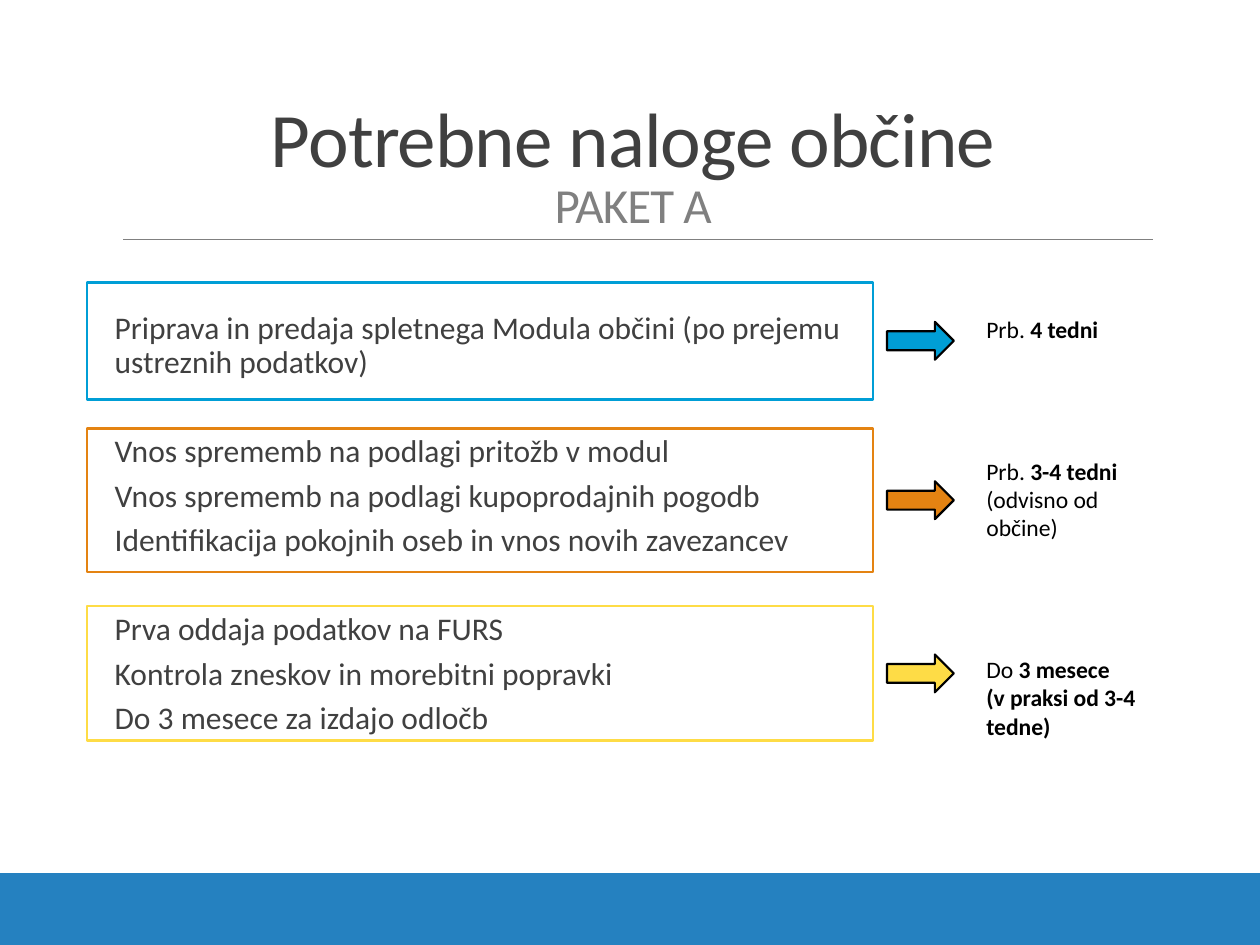
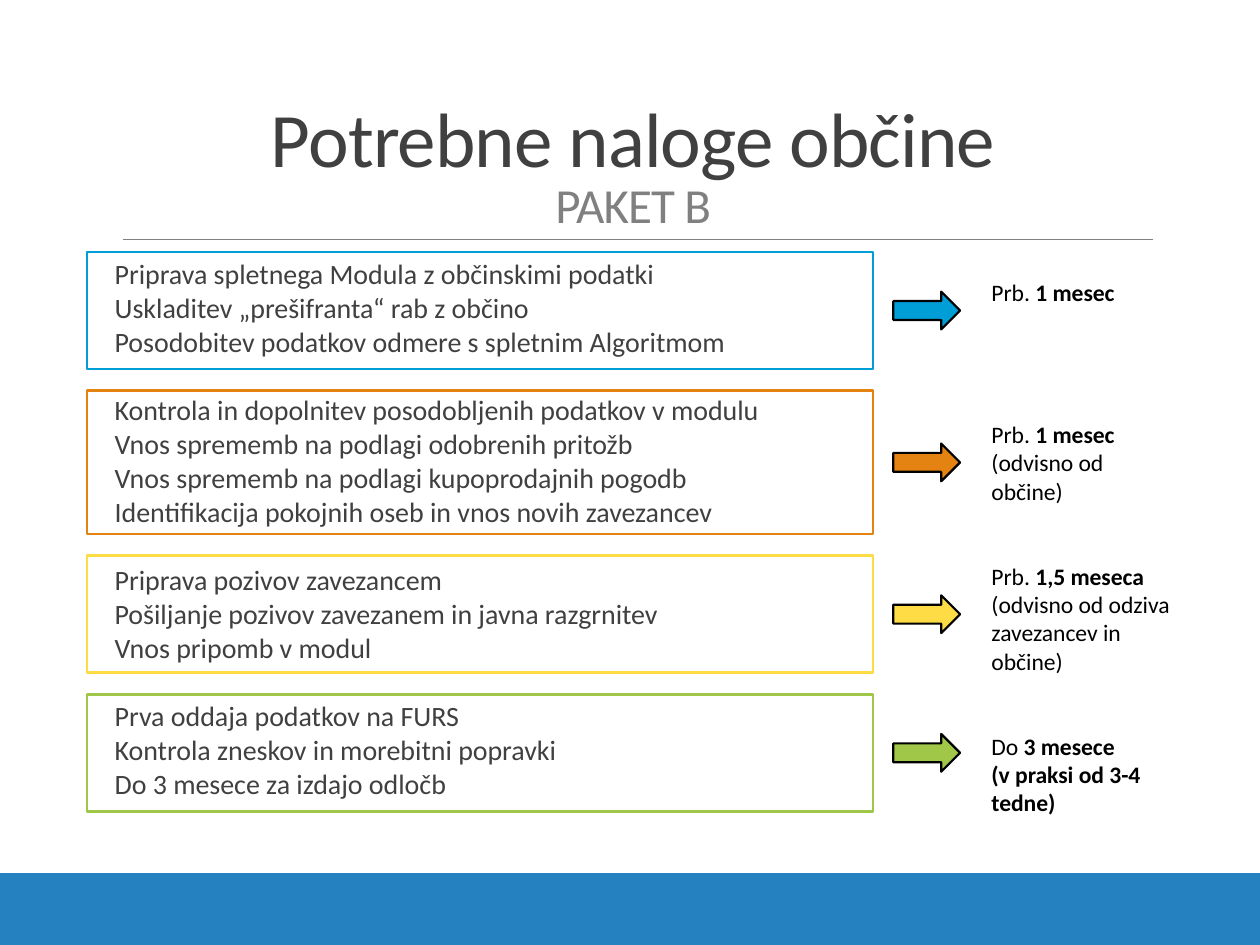
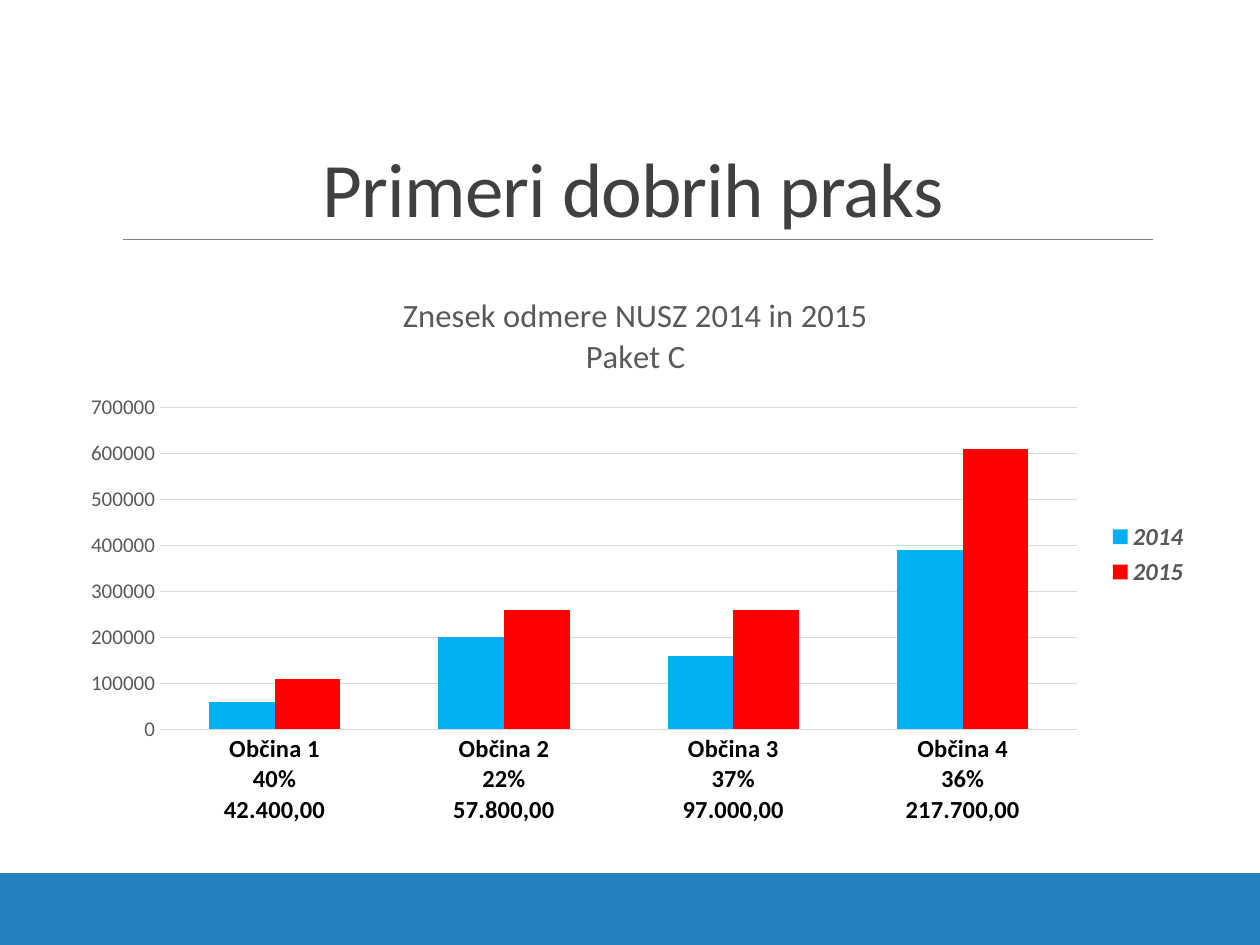
"""Build three slides on municipal tasks and good practice."""
from lxml import etree
from pptx import Presentation
from pptx.chart.data import CategoryChartData
from pptx.dml.color import RGBColor
from pptx.enum import chart as charts, shapes, text
from pptx.oxml import ns
from pptx.util import Inches, Pt

FONT = "Calibri"
BAND = RGBColor(0x25, 0x81, 0xC0)
BLACK = RGBColor(0, 0, 0)
DARK = RGBColor(0x40, 0x40, 0x40)
CHART_GREY = RGBColor(0x59, 0x59, 0x59)
GREY = RGBColor(0x80, 0x80, 0x80)
GRID = RGBColor(0xD9, 0xD9, 0xD9)
BLUE = RGBColor(0x00, 0x9E, 0xD6)
ORANGE = RGBColor(0xE4, 0x83, 0x12)
YELLOW = RGBColor(0xFE, 0xDC, 0x46)
GREEN = RGBColor(0xA0, 0xC7, 0x48)
SERIES_COLOURS = (RGBColor(0x00, 0xB0, 0xF0), RGBColor(0xFF, 0, 0))

STEP_COLOURS = (BLUE, ORANGE, YELLOW, GREEN)
STEP_LEFT, STEP_WIDTH = 0.69, 6.24
ARROW_WIDTH, ARROW_HEIGHT = 0.53, 0.3
LINE_FACTOR = 1.2
NOTE_SIZE = 13.5
BEFORE, AFTER = 2, 4

TASKS_A = [
    ["Priprava in predaja spletnega Modula občini (po prejemu ustreznih podatkov)"],
    ["Vnos sprememb na podlagi pritožb v modul",
     "Vnos sprememb na podlagi kupoprodajnih pogodb",
     "Identifikacija pokojnih oseb in vnos novih zavezancev"],
    ["Prva oddaja podatkov na FURS",
     "Kontrola zneskov in morebitni popravki",
     "Do 3 mesece za izdajo odločb"],
]
TASKS_B = [
    ["Priprava spletnega Modula z občinskimi podatki",
     "Uskladitev „prešifranta“ rab z občino",
     "Posodobitev podatkov odmere s spletnim Algoritmom"],
    ["Kontrola in dopolnitev posodobljenih podatkov v modulu",
     "Vnos sprememb na podlagi odobrenih pritožb",
     "Vnos sprememb na podlagi kupoprodajnih pogodb",
     "Identifikacija pokojnih oseb in vnos novih zavezancev"],
    ["Priprava pozivov zavezancem",
     "Pošiljanje pozivov zavezanem in javna razgrnitev",
     "Vnos pripomb v modul"],
    TASKS_A[-1],
]

DEADLINE = [[("Do ", False), ("3 mesece", True)], [("(v praksi od 3-4 tedne)", True)]]
NOTES_A = [
    (0, [[("Prb. ", False), ("4 tedni", True)]]),
    (4, [[("Prb. ", False), ("3-4 tedni ", True), ("(odvisno od občine)", False)]]),
    (4, DEADLINE),
]
NOTES_B = [
    (0, [[("Prb. ", False), ("1 mesec", True)]]),
    (4, [[("Prb. ", False), ("1 mesec ", True), ("(odvisno od občine)", False)]]),
    (2, [[("Prb. ", False), ("1,5 meseca", True)],
         [("(odvisno od odziva zavezancev in občine)", False)]]),
    (2, DEADLINE),
]


def style(font, size, colour, bold=None):
    """Apply the common typeface with a size and colour."""
    font.name, font.size, font.bold = FONT, Pt(size), bold
    font.color.rgb = colour


def add_box(page, kind, place, fill=None, line=None, weight=1):
    """Draw a preset shape without shadow."""
    box = page.shapes.add_shape(kind, *map(Inches, place))
    box.shadow.inherit = False
    if fill is None:
        box.fill.background()
    else:
        box.fill.solid()
        box.fill.fore_color.rgb = fill
    if line is None:
        box.line.fill.background()
    else:
        box.line.color.rgb = line
        box.line.width = Pt(weight)


def add_text_frame(page, place):
    """Add a wrapping text box and return its frame."""
    frame = page.shapes.add_textbox(*map(Inches, place)).text_frame
    frame.word_wrap = True
    return frame


def next_paragraph(frame, first):
    """Return the paragraph already there or a new one."""
    return frame.paragraphs[0] if first else frame.add_paragraph()


def add_title(page, title, subtitle=None):
    """Write the slide title with an optional smaller second line."""
    frame = add_text_frame(page, (0.9, 0.31, 8.25, 1.59))
    frame.vertical_anchor = text.MSO_ANCHOR.BOTTOM
    para = frame.paragraphs[0]
    para.alignment = text.PP_ALIGN.CENTER
    para.line_spacing = 0.85
    for content, size, colour in ((title, 44, DARK), (subtitle, 28, GREY)):
        if content:
            if para.runs:
                para.add_line_break()
            span = para.add_run()
            span.text = content
            style(span.font, size, colour)
            span._r.get_or_add_rPr().set("spc", "-50")


def add_page(deck, title, subtitle=None):
    """Add a blank page with the bottom bands, rule and title."""
    page = deck.slides.add_slide(deck.slide_layouts[6])
    for top, height in ((7, 0.5), (6.93, 0.07)):
        add_box(page, shapes.MSO_SHAPE.RECTANGLE, (0, top, 10, height), fill=BAND)
    rule = page.shapes.add_connector(
        shapes.MSO_CONNECTOR.STRAIGHT, *map(Inches, (0.98, 1.9, 9.15, 1.9)))
    rule.line.color.rgb = GREY
    rule.line.width = Pt(0.5)
    etree.SubElement(rule._element.spPr, ns.qn("a:effectLst"))
    add_title(page, title, subtitle)
    return page


def add_tasks(page, place, groups, size, spacing):
    """List the tasks, leaving one line between groups."""
    frame = add_text_frame(page, place)
    frame.margin_left, frame.margin_right = Inches(0.22), 0
    group_gap = size * LINE_FACTOR * spacing + BEFORE + AFTER
    for number, group in enumerate(groups):
        for row, task in enumerate(group):
            first = number == row == 0
            para = next_paragraph(frame, first)
            para.text = task
            para.line_spacing = spacing
            para.space_after = Pt(AFTER)
            if not first:
                para.space_before = Pt(BEFORE + (group_gap if row == 0 else 0))
            style(para.font, size, DARK)


def add_notes(page, place, groups):
    """Write the durations, each group some lines below the last."""
    frame = add_text_frame(page, place)
    for number, (gap_lines, group) in enumerate(groups):
        for row, spans in enumerate(group):
            para = next_paragraph(frame, number == row == 0)
            if row == 0 and gap_lines:
                para.space_before = Pt(gap_lines * NOTE_SIZE * LINE_FACTOR)
            style(para.font, NOTE_SIZE, BLACK)
            for content, bold in spans:
                span = para.add_run()
                span.text = content
                span.font.bold = bold


def add_steps(page, steps, arrow_left):
    """Frame each step and point an arrow from its middle."""
    for (top, height), colour in zip(steps, STEP_COLOURS):
        add_box(page, shapes.MSO_SHAPE.RECTANGLE,
                (STEP_LEFT, top, STEP_WIDTH, height), line=colour, weight=1.5)
        arrow_top = top + (height - ARROW_HEIGHT) / 2
        add_box(page, shapes.MSO_SHAPE.RIGHT_ARROW,
                (arrow_left, arrow_top, ARROW_WIDTH, ARROW_HEIGHT),
                fill=colour, line=BLACK, weight=1.25)


def place_plot(chart, **fractions):
    """Fix the inner plot area as fractions of the chart."""
    area = chart._chartSpace.chart.plotArea
    for old in area.findall(ns.qn("c:layout")):
        area.remove(old)
    layout = etree.Element(ns.qn("c:layout"))
    area.insert(0, layout)
    manual = etree.SubElement(layout, ns.qn("c:manualLayout"))
    settings = {"layoutTarget": "inner", "xMode": "edge", "yMode": "edge", **fractions}
    for name, value in settings.items():
        etree.SubElement(manual, ns.qn(f"c:{name}")).set("val", str(value))


def add_assessment_chart(page):
    """Compare the assessed amounts of both years by municipality."""
    data = CategoryChartData()
    data.categories = ["Občina 1\n40%\n42.400,00", "Občina 2\n22%\n57.800,00",
                       "Občina 3\n37%\n97.000,00", "Občina 4\n36%\n217.700,00"]
    data.add_series("2014", (60000, 200000, 160000, 390000))
    data.add_series("2015", (110000, 260000, 260000, 610000))
    chart = page.shapes.add_chart(
        charts.XL_CHART_TYPE.COLUMN_CLUSTERED,
        *map(Inches, (0.55, 2.16, 8.99, 4.48)), data).chart
    style(chart.font, 10, BLACK)

    chart.has_title = True
    title = chart.chart_title
    title.include_in_layout = False
    title.text_frame.text = "Znesek odmere NUSZ 2014 in 2015\nPaket C"
    for para in title.text_frame.paragraphs:
        style(para.font, 18.6, CHART_GREY, False)

    chart.has_legend = True
    chart.legend.position = charts.XL_LEGEND_POSITION.RIGHT
    chart.legend.include_in_layout = False
    style(chart.legend.font, 14, CHART_GREY, True)
    chart.legend.font.italic = True

    plot = chart.plots[0]
    plot.gap_width, plot.overlap, plot.vary_by_categories = 150, 0, False
    for series, colour in zip(plot.series, SERIES_COLOURS):
        series.format.fill.solid()
        series.format.fill.fore_color.rgb = colour

    for axis in (chart.category_axis, chart.value_axis):
        axis.major_tick_mark = axis.minor_tick_mark = charts.XL_TICK_MARK.NONE
        axis.format.line.fill.background()
    style(chart.category_axis.tick_labels.font, 14, BLACK, True)
    values = chart.value_axis
    style(values.tick_labels.font, 12, CHART_GREY)
    values.minimum_scale, values.maximum_scale, values.major_unit = 0, 700000, 100000
    values.major_gridlines.format.line.color.rgb = GRID
    values.major_gridlines.format.line.width = Pt(0.75)
    place_plot(chart, x=0.08, y=0.24, w=0.81, h=0.57)


def main():
    """Build and save the deck."""
    deck = Presentation()
    deck.slide_width, deck.slide_height = Inches(10), Inches(7.5)

    page = add_page(deck, "Potrebne naloge občine", "PAKET A")
    add_tasks(page, (0.69, 2.43, 6.73, 3.57), TASKS_A, 18, 0.9)
    add_notes(page, (7.73, 2.45, 1.42, 3.97), NOTES_A)
    add_steps(page, [(2.24, 0.93), (3.4, 1.14), (4.81, 1.07)], 7.04)

    page = add_page(deck, "Potrebne naloge občine", "PAKET B")
    add_tasks(page, (0.69, 2.06, 6.73, 4.52), TASKS_B, 16, 0.7)
    add_notes(page, (7.77, 2.16, 1.69, 4.64), NOTES_B)
    add_steps(page, [(2, 0.93), (3.1, 1.14), (4.41, 0.93), (5.51, 0.93)], 7.09)

    page = add_page(deck, "Primeri dobrih praks")
    add_assessment_chart(page)
    deck.save("out.pptx")


if __name__ == "__main__":
    main()
